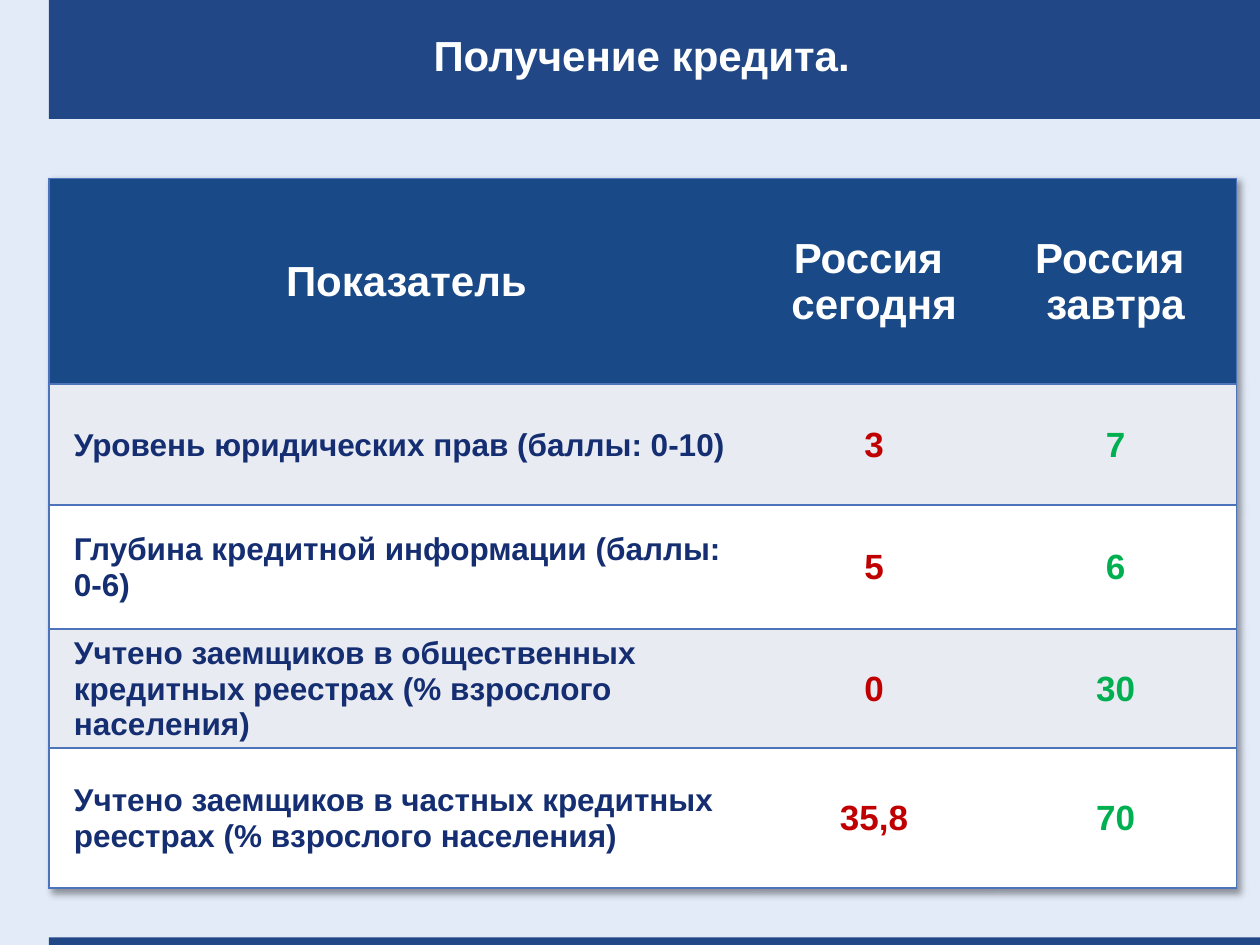
import pptx
import pptx.util
import pptx.dml.color
import pptx.enum.shapes
import pptx.enum.text
import pptx.oxml
import pptx.oxml.ns

Pt = pptx.util.Pt
RGBColor = pptx.dml.color.RGBColor
ALIGN = pptx.enum.text.PP_ALIGN
MIDDLE = pptx.enum.text.MSO_ANCHOR.MIDDLE

PALE_BLUE = RGBColor(0xE3, 0xEB, 0xF8)
BAND_BLUE = RGBColor(0x21, 0x47, 0x86)
HEADER_BLUE = RGBColor(0x19, 0x49, 0x86)
BORDER_BLUE = RGBColor(0x4D, 0x74, 0xBB)
TEXT_BLUE = RGBColor(0x14, 0x2E, 0x71)
STRIPE = RGBColor(0xE9, 0xEB, 0xF3)
WHITE = RGBColor(0xFF, 0xFF, 0xFF)
RED = RGBColor(0xC0, 0x00, 0x00)
GREEN = RGBColor(0x00, 0xB0, 0x50)

HEADER = ["Показатель", "Россия \nсегодня", "Россия \nзавтра"]
INDICATORS = [
    ["Уровень юридических прав (баллы: 0-10)", "3", "7"],
    ["Глубина кредитной информации (баллы: 0-6)", "5", "6"],
    ["Учтено заемщиков в общественных кредитных реестрах (% взрослого населения)", "0", "30"],
    ["Учтено заемщиков в частных кредитных реестрах (% взрослого населения)", "35,8", "70"],
]
COLUMN_WIDTHS = [402.5, 138, 138]
ROW_HEIGHTS = [117.5, 69, 71, 68, 80]


def set_all(target, values):
    for name, value in values.items():
        setattr(target, name, value)


def shadow_xml(blur, distance, alpha):
    return pptx.oxml.parse_xml(
        f'<a:effectLst {pptx.oxml.ns.nsdecls("a")}>'
        f'<a:outerShdw blurRad="{Pt(blur)}" dist="{Pt(distance)}" dir="2700000" algn="tl" rotWithShape="0">'
        f'<a:srgbClr val="000000"><a:alpha val="{alpha * 1000}"/></a:srgbClr>'
        '</a:outerShdw></a:effectLst>')


def write(frame, text, size, color, align, **para_values):
    for index, line in enumerate(text.split("\n")):
        para = frame.add_paragraph() if index else frame.paragraphs[0]
        set_all(para, {"alignment": align, **para_values})
        span = para.add_run()
        span.text = line
        set_all(span.font, {"name": "Arial", "size": Pt(size), "bold": True})
        span.font.color.rgb = color


def add_band(page, left, top, width, height):
    band = page.shapes.add_shape(
        pptx.enum.shapes.MSO_SHAPE.RECTANGLE, Pt(left), Pt(top), Pt(width), Pt(height))
    band.shadow.inherit = False
    band.fill.solid()
    band.fill.fore_color.rgb = BAND_BLUE
    band.line.fill.background()


def add_title(page, left, top, width, height):
    box = page.shapes.add_textbox(Pt(left), Pt(top), Pt(width), Pt(height))
    frame = box.text_frame
    set_all(frame, {"word_wrap": True, "vertical_anchor": MIDDLE, "margin_left": Pt(14.4),
                    "margin_right": 0, "margin_top": 0, "margin_bottom": 0})
    write(frame, "Получение кредита.", 24, WHITE, ALIGN.CENTER, line_spacing=0.8)
    properties = frame.paragraphs[0].runs[0].font._element
    properties.find(pptx.oxml.ns.qn("a:solidFill")).addnext(shadow_xml(0, 3, 100))


def add_borders(cell, visible):
    properties = cell._tc.get_or_add_tcPr()
    for side in "LRTB":
        fill = f'<a:solidFill><a:srgbClr val="{BORDER_BLUE}"/></a:solidFill>' if side in visible else "<a:noFill/>"
        properties.append(pptx.oxml.parse_xml(
            f'<a:ln{side} {pptx.oxml.ns.nsdecls("a")} w="{Pt(1)}">{fill}</a:ln{side}>'))


def add_indicator_table(page, left, top, widths, heights):
    holder = page.shapes.add_table(
        len(heights), len(widths), Pt(left), Pt(top), Pt(sum(widths)), Pt(sum(heights)))
    table = holder.table
    set_all(table, {"first_row": False, "horz_banding": False})
    table._tbl.tblPr.insert(0, shadow_xml(4, 3, 40))
    for column, width in zip(table.columns, widths):
        column.width = Pt(width)
    for row, height in zip(table.rows, heights):
        row.height = Pt(height)
    styles = [(18, TEXT_BLUE, ALIGN.LEFT), (20, RED, ALIGN.CENTER), (20, GREEN, ALIGN.CENTER)]
    for row_index, texts in enumerate([HEADER] + INDICATORS):
        for column_index, text in enumerate(texts):
            cell = table.cell(row_index, column_index)
            set_all(cell, {"vertical_anchor": MIDDLE, "margin_left": Pt(0.75), "margin_right": Pt(0.75),
                           "margin_top": Pt(0.75), "margin_bottom": 0})
            add_borders(cell, "TB" + {0: "L", 2: "R"}.get(column_index, ""))
            cell.fill.solid()
            if row_index == 0:
                cell.fill.fore_color.rgb = HEADER_BLUE
                style, indent = (24, WHITE, ALIGN.CENTER), 6
            else:
                cell.fill.fore_color.rgb = STRIPE if row_index % 2 else WHITE
                style, indent = styles[column_index], 13.5
            write(cell.text_frame, text, *style)
            if column_index == 0:
                cell.text_frame.paragraphs[0]._p.get_or_add_pPr().set("marL", str(Pt(indent)))


def main():
    deck = pptx.Presentation()
    set_all(deck, {"slide_width": Pt(720), "slide_height": Pt(540)})
    page = deck.slides.add_slide(deck.slide_layouts[6])
    page.background.fill.solid()
    page.background.fill.fore_color.rgb = PALE_BLUE
    add_band(page, 28, 0, 692, 68)
    add_band(page, 28, 535.7, 692, 5.5)
    add_indicator_table(page, 28, 102, COLUMN_WIDTHS, ROW_HEIGHTS)
    add_title(page, 28, 0, 663, 68)
    deck.save("out.pptx")


if __name__ == "__main__":
    main()
